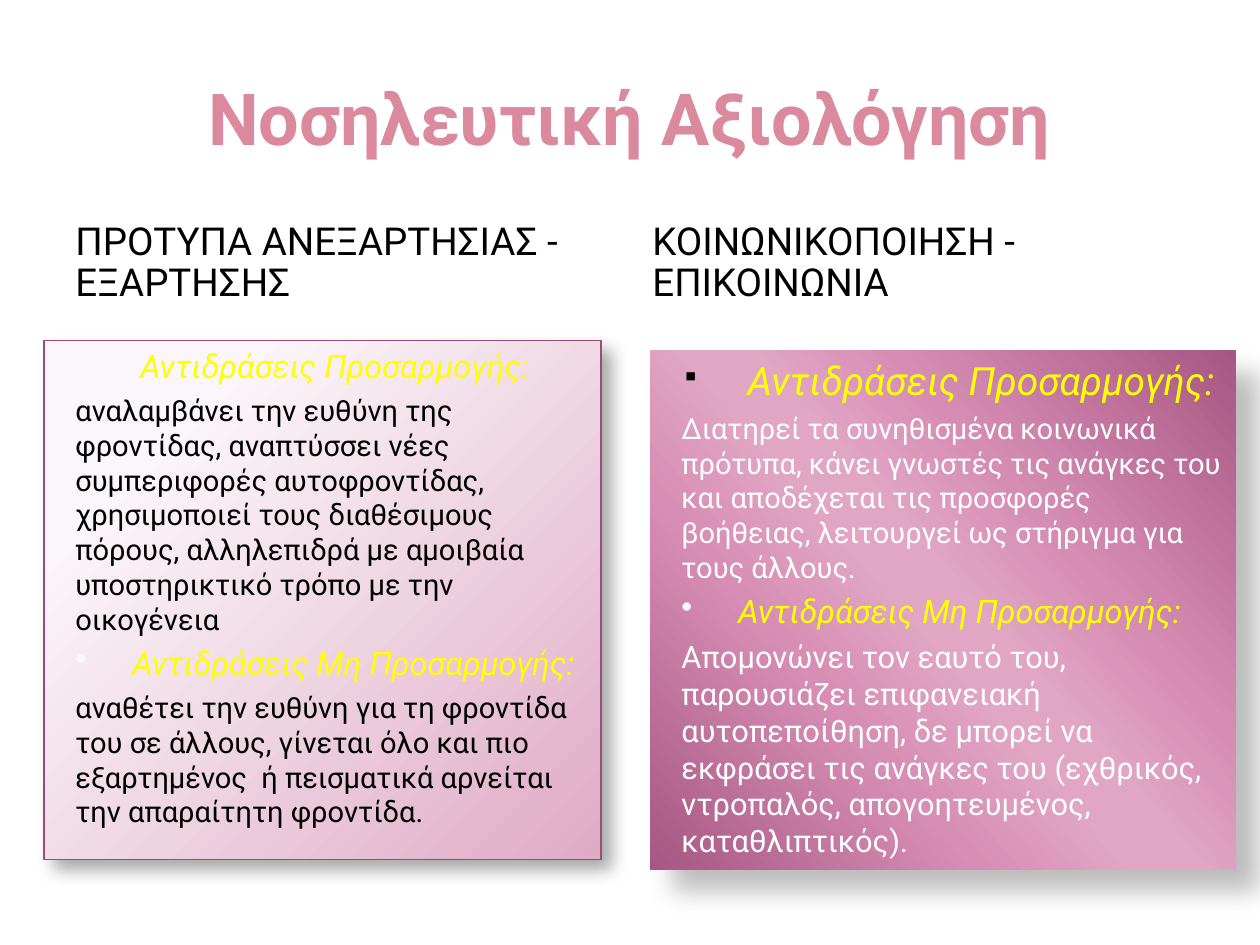
from lxml import etree
from pptx import Presentation
from pptx.dml.color import RGBColor
from pptx.enum.shapes import MSO_SHAPE
from pptx.enum.text import MSO_ANCHOR, PP_ALIGN
from pptx.oxml.ns import qn
from pptx.util import Inches, Pt


def rgb(hex_code):
    return RGBColor.from_string(hex_code)


def node(parent, tag, **attributes):
    child = etree.SubElement(parent, qn(f"a:{tag}"))
    for key, value in attributes.items():
        child.set(key, str(value))
    return child


def color_node(parent, hex_code):
    return node(parent, "srgbClr", val=hex_code)


def apply(target, values):
    for key, value in values.items():
        setattr(target, key, value)


class AssessmentSlide:
    font_name = "Roboto"
    yellow = "FFFF00"
    bullet_color = "F9F9F9"

    def __init__(self, presentation):
        self.slide = presentation.slides.add_slide(presentation.slide_layouts[6])

    def add_words(self, paragraph, words, size, color, **font_format):
        run = paragraph.add_run()
        run.text = words
        apply(run.font, {"name": self.font_name, "size": Pt(size), **font_format})
        run.font.color.rgb = rgb(color)

    def heading(self, words, box, size, color, frame_format, paragraph_format, **font_format):
        frame = self.slide.shapes.add_textbox(*map(Inches, box)).text_frame
        apply(frame, {"word_wrap": True, "vertical_anchor": MSO_ANCHOR.MIDDLE, **frame_format})
        apply(frame.paragraphs[0], paragraph_format)
        self.add_words(frame.paragraphs[0], words, size, color, **font_format)

    def gradient(self, shape, stops, angle=None):
        shape.fill.background()
        blank_fill = shape._element.spPr.find(qn("a:noFill"))
        fill = etree.Element(qn("a:gradFill"), rotWithShape="1")
        stop_list = node(fill, "gsLst")
        for position, color in stops:
            color_node(node(stop_list, "gs", pos=position * 1000), color)
        if angle is None:
            circle = node(fill, "path", path="circle")
            node(circle, "fillToRect", l=-15000, t=-15000, r=115000, b=115000)
        else:
            node(fill, "lin", ang=angle * 60000, scaled=0)
        blank_fill.getparent().replace(blank_fill, fill)

    def shadow(self, shape, opacity, blur, distance):
        shape.shadow.inherit = False
        effects = shape._element.spPr.find(qn("a:effectLst"))
        outer = node(effects, "outerShdw", blurRad=Pt(blur), dist=Pt(distance),
                     dir=45 * 60000, algn="tl", rotWithShape=0)
        node(color_node(outer, "000000"), "alpha", val=opacity * 1000)

    def indent(self, paragraph, margin, first_line=0):
        properties = paragraph._p.get_or_add_pPr()
        properties.set("marL", str(Inches(margin)))
        properties.set("indent", str(Inches(first_line)))
        return properties

    def bullet(self, paragraph, character, color, percent):
        properties = self.indent(paragraph, 0.6, -0.45)
        color_node(node(properties, "buClr"), color)
        node(properties, "buSzPct", val=percent * 1000)
        node(properties, "buChar", char=character)

    def panel(self, box, stops, angle, shadow, outline, text_color, reactions):
        shape = self.slide.shapes.add_shape(MSO_SHAPE.RECTANGLE, *map(Inches, box))
        self.gradient(shape, stops, angle)
        if outline:
            shape.line.color.rgb = rgb(outline)
            shape.line.width = Pt(0.75)
        else:
            shape.line.fill.background()
        self.shadow(shape, *shadow)
        frame = shape.text_frame
        apply(frame, {"word_wrap": True, "vertical_anchor": MSO_ANCHOR.TOP})
        for index, (label, label_size, marker, details, detail_size) in enumerate(reactions):
            label_line = frame.add_paragraph() if index else frame.paragraphs[0]
            self.bullet(label_line, *marker)
            self.add_words(label_line, label, label_size, self.yellow, italic=True)
            if index:
                label_line.space_before = Pt(4)
            description = frame.add_paragraph()
            self.indent(description, 0.15)
            description.space_before = Pt(4)
            self.add_words(description, details, detail_size, text_color)
            for paragraph in (label_line, description):
                paragraph.alignment = PP_ALIGN.LEFT


def main():
    presentation = Presentation()
    apply(presentation, {"slide_width": Inches(10), "slide_height": Inches(7.5)})
    page = AssessmentSlide(presentation)

    page.heading("Νοσηλευτική Αξιολόγηση", (0.5, 0.3, 9, 1.25), 41, "DB8A9E",
                 {"margin_left": Inches(0.05), "margin_right": Inches(0.05),
                  "margin_top": 0, "margin_bottom": 0},
                 {"alignment": PP_ALIGN.CENTER}, bold=True)
    topics = ["ΠΡΟΤΥΠΑ ΑΝΕΞΑΡΤΗΣΙΑΣ - ΕΞΑΡΤΗΣΗΣ", "ΚΟΙΝΩΝΙΚΟΠΟΙΗΣΗ - ΕΠΙΚΟΙΝΩΝΙΑ"]
    for column, topic in enumerate(topics):
        page.heading(topic, (0.5 + column * 4.58, 1.68, 4.42, 0.82), 22, "000000",
                     {}, {"line_spacing": 0.9})

    adaptive = " Αντιδράσεις Προσαρμογής:"
    maladaptive = "Αντιδράσεις Μη Προσαρμογής:"
    dot = ("•", page.bullet_color, 100)
    square = ("▪", "000000", 65)
    page.panel(
        (0.35, 2.7, 4.42, 4.12), [(20, "FBF6F9"), (100, "DFABC5")], None,
        (35, 10.2, 8), "9A4C78", "000000",
        [(adaptive, 18.5, dot,
          "αναλαμβάνει την ευθύνη της φροντίδας, αναπτύσσει νέες συμπεριφορές "
          "αυτοφροντίδας, χρησιμοποιεί τους διαθέσιμους πόρους, αλληλεπιδρά με "
          "αμοιβαία υποστηρικτικό τρόπο με την οικογένεια", 16.6),
         (maladaptive, 18.5, dot,
          "αναθέτει την ευθύνη για τη φροντίδα του σε άλλους, γίνεται όλο και πιο "
          "εξαρτημένος  ή πεισματικά αρνείται την απαραίτητη φροντίδα.", 16.6)])
    page.panel(
        (5.16, 2.78, 4.65, 4.12),
        [(0, "A65783"), (33, "D68DB4"), (47, "E1A6C4"),
         (53, "E1A6C4"), (68, "D78EB4"), (100, "A65783")], 139,
        (26, 15, 18), None, "FFFFFF",
        [(adaptive, 22.2, square,
          "Διατηρεί τα συνηθισμένα κοινωνικά πρότυπα, κάνει γνωστές τις ανάγκες του "
          "και αποδέχεται τις προσφορές βοήθειας, λειτουργεί ως στήριγμα για τους "
          "άλλους.", 16.6),
         (maladaptive, 18.5, dot,
          "Απομονώνει τον εαυτό του, παρουσιάζει επιφανειακή αυτοπεποίθηση, δε μπορεί "
          "να εκφράσει τις ανάγκες του (εχθρικός, ντροπαλός, απογοητευμένος, "
          "καταθλιπτικός).", 17.6)])

    presentation.save("out.pptx")


if __name__ == "__main__":
    main()
